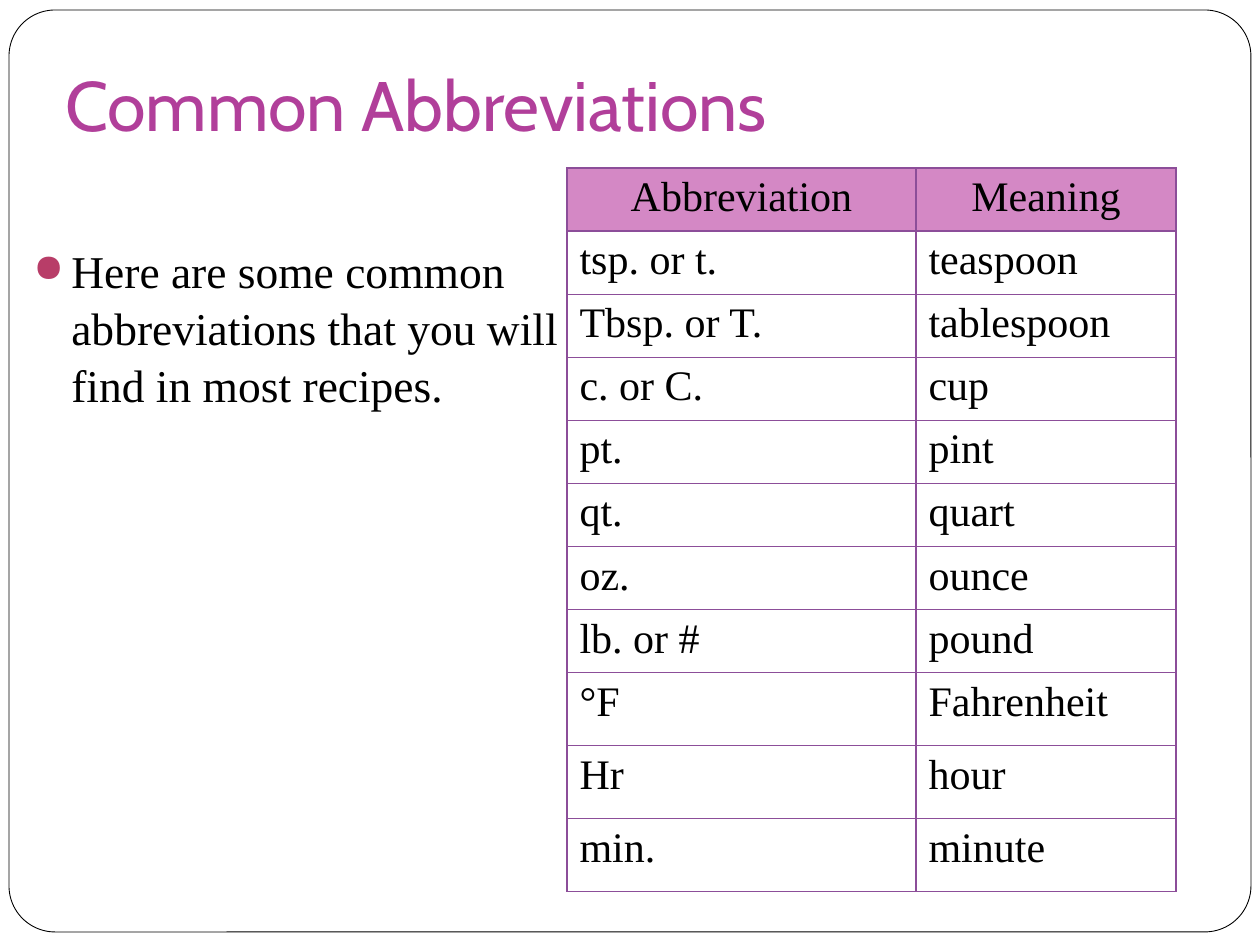
from lxml import etree
from pptx import Presentation
from pptx.dml.color import RGBColor
from pptx.enum.shapes import MSO_SHAPE
from pptx.enum.text import MSO_ANCHOR, PP_ALIGN
from pptx.oxml.ns import qn
from pptx.util import Pt

TITLE = "Common Abbreviations"
INTRO = "Here are some common abbreviations that you will find in most recipes."
ABBREVIATIONS = [
    ("Abbreviation", "Meaning"),
    ("tsp. or t.", "teaspoon"),
    ("Tbsp. or T.", "tablespoon"),
    ("c. or C.", "cup"),
    ("pt.", "pint"),
    ("qt.", "quart"),
    ("oz.", "ounce"),
    ("lb. or #", "pound"),
    ("°F", "Fahrenheit"),
    ("Hr", "hour"),
    ("min.", "minute"),
]
COLUMN_WIDTHS = [349, 260]
ROW_HEIGHTS = [63] * 8 + [73] * 3
SERIF, SANS = "Times New Roman", "Cabin"
BLACK, WHITE, MAGENTA, PINK, PURPLE, RED = (
    "000000", "FFFFFF", "B13F9A", "D488C5", "8C4E99", "B83D68")
ROUNDED = MSO_SHAPE.ROUNDED_RECTANGLE
LEFT, CENTER = PP_ALIGN.LEFT, PP_ALIGN.CENTER
TOP, BOTTOM = MSO_ANCHOR.TOP, MSO_ANCHOR.BOTTOM


def px(*lengths):
    return [round(length * 914400 / 126) for length in lengths]


def rgb(value):
    return RGBColor.from_string(value)


def add_child(parent, tag, **attributes):
    return etree.SubElement(parent, qn(tag), attributes)


def add_bullet(paragraph, symbol, color, percent, indent):
    properties = paragraph._p.get_or_add_pPr()
    properties.set("marL", str(indent))
    properties.set("indent", str(-indent))
    bullet_color = add_child(properties, "a:buClr")
    add_child(bullet_color, "a:srgbClr", val=color)
    add_child(properties, "a:buSzPct", val=str(percent * 1000))
    add_child(properties, "a:buChar", char=symbol)


def write(frame, text, size, font=SERIF, color=BLACK, align=LEFT, spacing=None, bullet=None):
    paragraph = frame.paragraphs[0]
    paragraph.alignment = align
    if spacing:
        paragraph.line_spacing = spacing
    if bullet:
        add_bullet(paragraph, **bullet)
    run = paragraph.add_run()
    run.text = text
    run.font.size = Pt(size)
    run.font.name = font
    run.font.color.rgb = rgb(color)


def add_text(slide, box, text, anchor=TOP, top=6, bottom=6, **text_format):
    frame = slide.shapes.add_textbox(*px(*box)).text_frame
    frame.word_wrap = True
    frame.vertical_anchor = anchor
    frame.margin_top, frame.margin_bottom = px(top, bottom)
    write(frame, text, **text_format)


def add_borders(cell, color, width):
    properties = cell._tc.get_or_add_tcPr()
    for position, side in enumerate(("a:lnL", "a:lnR", "a:lnT", "a:lnB")):
        border = etree.Element(qn(side), w=str(Pt(width)))
        fill = add_child(border, "a:solidFill")
        add_child(fill, "a:srgbClr", val=color)
        properties.insert(position, border)


def add_frame(slide):
    frame = slide.shapes.add_shape(ROUNDED, *px(9, 10, 1242, 922))
    frame.adjustments[0] = 0.05
    frame.shadow.inherit = False
    frame.fill.solid()
    frame.fill.fore_color.rgb = rgb(WHITE)
    frame.line.color.rgb = rgb(BLACK)
    frame.line.width = Pt(0.5)


def add_abbreviations(slide, left, top):
    size = px(sum(COLUMN_WIDTHS), sum(ROW_HEIGHTS))
    table = slide.shapes.add_table(
        len(ABBREVIATIONS), len(COLUMN_WIDTHS), *px(left, top), *size).table
    table.horz_banding = False
    for column, width in zip(table.columns, px(*COLUMN_WIDTHS)):
        column.width = width
    for row, height in zip(table.rows, px(*ROW_HEIGHTS)):
        row.height = height
    for r, entry in enumerate(ABBREVIATIONS):
        for c, text in enumerate(entry):
            cell = table.cell(r, c)
            if r == 0:
                cell.fill.solid()
                cell.fill.fore_color.rgb = rgb(PINK)
            else:
                cell.fill.background()
            add_borders(cell, PURPLE, 0.75)
            write(cell.text_frame, text, size=24, align=LEFT if r else CENTER)


def main():
    """Build the recipe abbreviations slide."""
    deck = Presentation()
    deck.slide_width, deck.slide_height = px(1260, 945)
    slide = deck.slides.add_slide(deck.slide_layouts[6])
    add_frame(slide)
    add_text(slide, (53, 0, 1071, 158), TITLE, anchor=BOTTOM, bottom=13,
             size=40, font=SANS, color=MAGENTA)
    bullet = dict(symbol="●", color=RED, percent=85, indent=px(38)[0])
    add_text(slide, (21, 231, 567, 252), INTRO, top=10, size=26,
             spacing=1.04, bullet=bullet)
    add_abbreviations(slide, 567, 168)
    deck.save("out.pptx")


if __name__ == "__main__":
    main()
